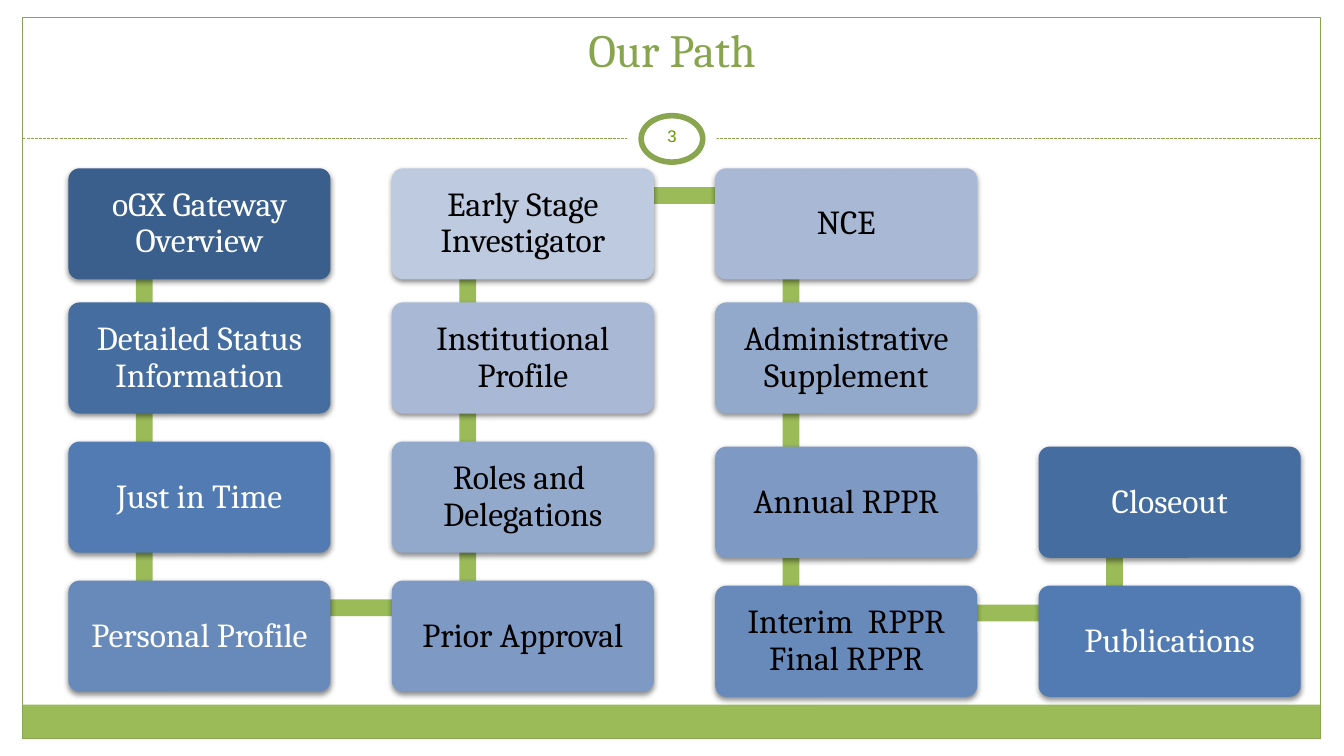
from lxml import etree
from pptx import Presentation
from pptx.dml.color import RGBColor
from pptx.enum.dml import MSO_LINE
from pptx.enum.shapes import MSO_CONNECTOR, MSO_SHAPE
from pptx.enum.text import MSO_ANCHOR, PP_ALIGN
from pptx.oxml import parse_xml
from pptx.oxml.ns import nsdecls, qn
from pptx.util import Pt

WHITE = RGBColor(0xFF, 0xFF, 0xFF)
BLACK = RGBColor(0, 0, 0)
GREEN = RGBColor(0x9B, 0xBB, 0x59)
OLIVE = RGBColor(0x89, 0xA5, 0x4F)
TITLE_GREEN = RGBColor(0x88, 0xA4, 0x4D)
NUMBER_GREEN = RGBColor(0x66, 0x99, 0x00)
BLUES = [RGBColor.from_string(code) for code in (
    "3A5F8C", "456DA0", "517BB2", "688ABB", "7E99C3", "93A9CC", "A9B9D5", "BECADF")]

SHADOW = (
    f'<a:effectLst {nsdecls("a")}>'
    '<a:outerShdw blurRad="50800" dist="25400" dir="5400000" rotWithShape="0">'
    '<a:srgbClr val="000000"><a:alpha val="45000"/></a:srgbClr>'
    '</a:outerShdw></a:effectLst>')

prs = Presentation()
prs.slide_width, prs.slide_height = Pt(960), Pt(540)
slide = prs.slides.add_slide(prs.slide_layouts[6])
shapes = slide.shapes


def add_block(kind, left, top, width, height, fill=None, outline=None, weight=0.75):
    block = shapes.add_shape(kind, Pt(left), Pt(top), Pt(width), Pt(height))
    block.shadow.inherit = False
    if fill is None:
        block.fill.background()
    else:
        block.fill.solid()
        block.fill.fore_color.rgb = fill
    if outline is None:
        block.line.fill.background()
    else:
        block.line.color.rgb = outline
        block.line.width = Pt(weight)
    return block


def write(block, text, size, color, font="Cambria", anchor=MSO_ANCHOR.MIDDLE):
    frame = block.text_frame
    frame.word_wrap = True
    frame.vertical_anchor = anchor
    frame.text = text
    paragraph = frame.paragraphs[0]
    paragraph.alignment = PP_ALIGN.CENTER
    paragraph.font.name = font
    paragraph.font.size = Pt(size)
    paragraph.font.color.rgb = color
    return frame


add_block(MSO_SHAPE.RECTANGLE, 16, 503.3, 927.5, 24.5, GREEN)
add_block(MSO_SHAPE.RECTANGLE, 16, 12.2, 927.5, 515.6, outline=OLIVE)

divider = shapes.add_connector(MSO_CONNECTOR.STRAIGHT, Pt(16), Pt(98.9), Pt(943.5), Pt(98.9))
divider.line.color.rgb = OLIVE
divider.line.width = Pt(0.75)
divider.line.dash_style = MSO_LINE.SQUARE_DOT
etree.SubElement(divider.element.spPr, qn("a:effectLst"))

add_block(MSO_SHAPE.OVAL, 448, 75.4, 64, 48, WHITE)
add_block(MSO_SHAPE.OVAL, 458, 82.6, 44, 33.2, WHITE, OLIVE, 4)
page_number = shapes.add_textbox(Pt(448), Pt(86.5), Pt(64), Pt(21.6))
write(page_number, "3", 12, NUMBER_GREEN, "Arial")
title = shapes.add_textbox(Pt(144), Pt(11.5), Pt(672), Pt(46.8))
write(title, "Our Path", 33, TITLE_GREEN, anchor=MSO_ANCHOR.BOTTOM)

FIRST_LEFT, COLUMN_STEP = 48.9, 231
STEP_WIDTH, STEP_HEIGHT = 187.2, 79.4
LINK_THICKNESS = 12
LINK_X, LINK_Y = 54.2, 19.5

LEFT_TOPS = [120.2, 216, 315.4, 414.7]
RIGHT_TOPS = [120.2, 216, 319, 418.3]
stops = [(0, top) for top in LEFT_TOPS]
stops += [(1, top) for top in reversed(LEFT_TOPS)]
stops += [(2, top) for top in RIGHT_TOPS]
stops += [(3, top) for top in reversed(RIGHT_TOPS[2:])]

steps = [
    ("oGX Gateway Overview", 0, WHITE),
    ("Detailed Status Information", 1, WHITE),
    ("Just in Time", 2, WHITE),
    ("Personal Profile", 3, WHITE),
    ("Prior Approval", 4, BLACK),
    ("Roles and \vDelegations", 5, BLACK),
    ("Institutional Profile", 6, BLACK),
    ("Early Stage Investigator", 7, BLACK),
    ("NCE", 6, BLACK),
    ("Administrative Supplement", 5, BLACK),
    ("Annual RPPR", 4, BLACK),
    ("Interim  RPPR Final RPPR", 3, BLACK),
    ("Publications", 2, WHITE),
    ("Closeout", 1, WHITE),
]

for (column, top), (next_column, next_top) in zip(stops, stops[1:]):
    link_left = FIRST_LEFT + column * COLUMN_STEP + LINK_X - LINK_THICKNESS / 2
    link_top = min(top, next_top) + LINK_Y - LINK_THICKNESS / 2
    link_width = LINK_THICKNESS + (next_column - column) * COLUMN_STEP
    link_height = LINK_THICKNESS + abs(next_top - top)
    add_block(MSO_SHAPE.RECTANGLE, link_left, link_top, link_width, link_height, GREEN)

for (column, top), (label, shade, ink) in zip(stops, steps):
    step = add_block(MSO_SHAPE.ROUNDED_RECTANGLE, FIRST_LEFT + column * COLUMN_STEP, top,
                     STEP_WIDTH, STEP_HEIGHT, BLUES[shade])
    step.adjustments[0] = 0.1
    properties = step.element.spPr
    properties.replace(properties.find(qn("a:effectLst")), parse_xml(SHADOW))
    frame = write(step, label, 24, ink)
    frame.margin_left = frame.margin_right = Pt(9)
    frame.margin_top = frame.margin_bottom = Pt(9)
    frame.paragraphs[0].line_spacing = 0.9

prs.save("out.pptx")
